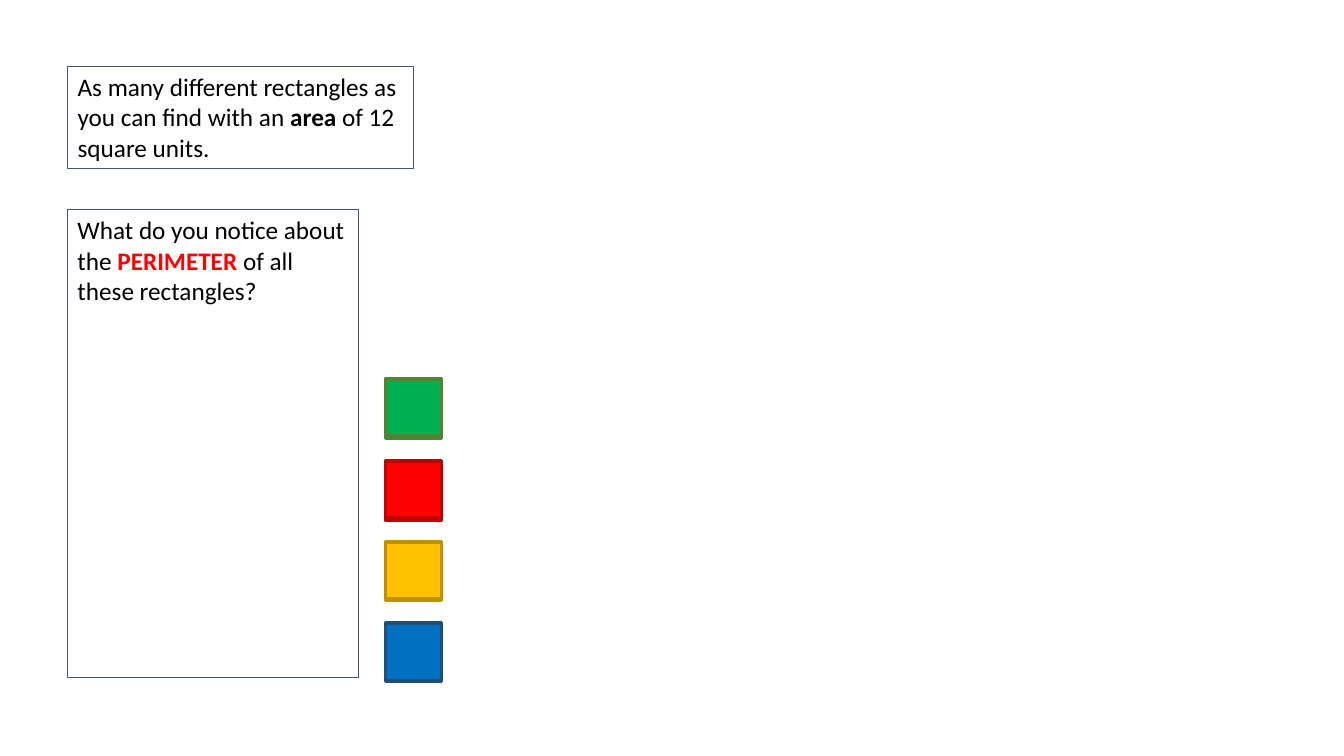
from dataclasses import dataclass

from pptx import Presentation
from pptx.dml.color import RGBColor
from pptx.enum.shapes import MSO_SHAPE
from pptx.enum.text import MSO_ANCHOR, MSO_AUTO_SIZE, PP_ALIGN
from pptx.shapes.autoshape import Shape
from pptx.slide import Slide
from pptx.util import Inches, Pt


@dataclass(frozen=True)
class Theme:
    font: str = "Calibri"
    size: float = 18
    ink: str = "000000"
    alert: str = "FF0000"
    frame: str = "44546A"
    thin: float = 0.75
    thick: float = 2.25


@dataclass(frozen=True)
class Span:
    text: str
    color: str
    bold: bool = False


@dataclass(frozen=True)
class Box:
    top: float
    width: float
    height: float
    spans: tuple[Span, ...]


@dataclass(frozen=True)
class Pile:
    fill: str
    line: str
    top: float
    shifts: tuple[float, ...]


THEME = Theme()
LEFT = 0.67
TILE_LEFT = 3.82
TILE_SIDE = 0.56

TASK = Box(0.66, 3.43, 1.01, (
    Span("As many different rectangles as you can find with an ", THEME.ink),
    Span("area", THEME.ink, True),
    Span(" of 12 square units.", THEME.ink),
))
QUERY = Box(2.08, 2.89, 4.64, (
    Span("What do you notice about the ", THEME.ink),
    Span("PERIMETER", THEME.alert, True),
    Span(" of all these rectangles?", THEME.ink),
))
PILES = (
    Pile("0070C0", "1F4E79", 6.18, (0.02, 0, 0.01)),
    Pile("FFC000", "BF9000", 5.37, (0.03, 0, 0.02, 0.01)),
    Pile("FF0000", "C00000", 4.57, (0.03, 0, 0.02, 0.01)),
    Pile("00B050", "548235", 3.76, (0.01, 0.03, 0.02, 0)),
)


def outline(shape: Shape, color: str, width: float) -> None:
    """Give a shape a solid outline."""
    shape.line.color.rgb = RGBColor.from_string(color)
    shape.line.width = Pt(width)


def write(shape: Shape, box: Box) -> None:
    """Place a framed box and fill it with its spans."""
    shape.left, shape.top = Inches(LEFT), Inches(box.top)
    shape.width, shape.height = Inches(box.width), Inches(box.height)
    outline(shape, THEME.frame, THEME.thin)
    frame = shape.text_frame
    frame.word_wrap = True
    frame.auto_size = MSO_AUTO_SIZE.NONE
    frame.vertical_anchor = MSO_ANCHOR.TOP
    para = frame.paragraphs[0]
    para.alignment = PP_ALIGN.LEFT
    for span in box.spans:
        run = para.add_run()
        run.text = span.text
        run.font.name = THEME.font
        run.font.size = Pt(THEME.size)
        run.font.bold = span.bold
        run.font.color.rgb = RGBColor.from_string(span.color)


def stack(slide: Slide, pile: Pile) -> None:
    """Draw a pile of square tiles, back to front."""
    side = Inches(TILE_SIDE)
    for shift in pile.shifts:
        tile = slide.shapes.add_shape(
            MSO_SHAPE.RECTANGLE, Inches(TILE_LEFT), Inches(pile.top + shift), side, side)
        tile.shadow.inherit = False
        tile.fill.solid()
        tile.fill.fore_color.rgb = RGBColor.from_string(pile.fill)
        outline(tile, pile.line, THEME.thick)


def main() -> None:
    """Build and save the slide."""
    deck = Presentation()
    deck.slide_width, deck.slide_height = Inches(13.33), Inches(7.5)
    slide = deck.slides.add_slide(deck.slide_layouts[5])
    write(slide.shapes.title, TASK)
    write(slide.shapes.add_textbox(0, 0, 0, 0), QUERY)
    for pile in PILES:
        stack(slide, pile)
    deck.save("out.pptx")


if __name__ == "__main__":
    main()
